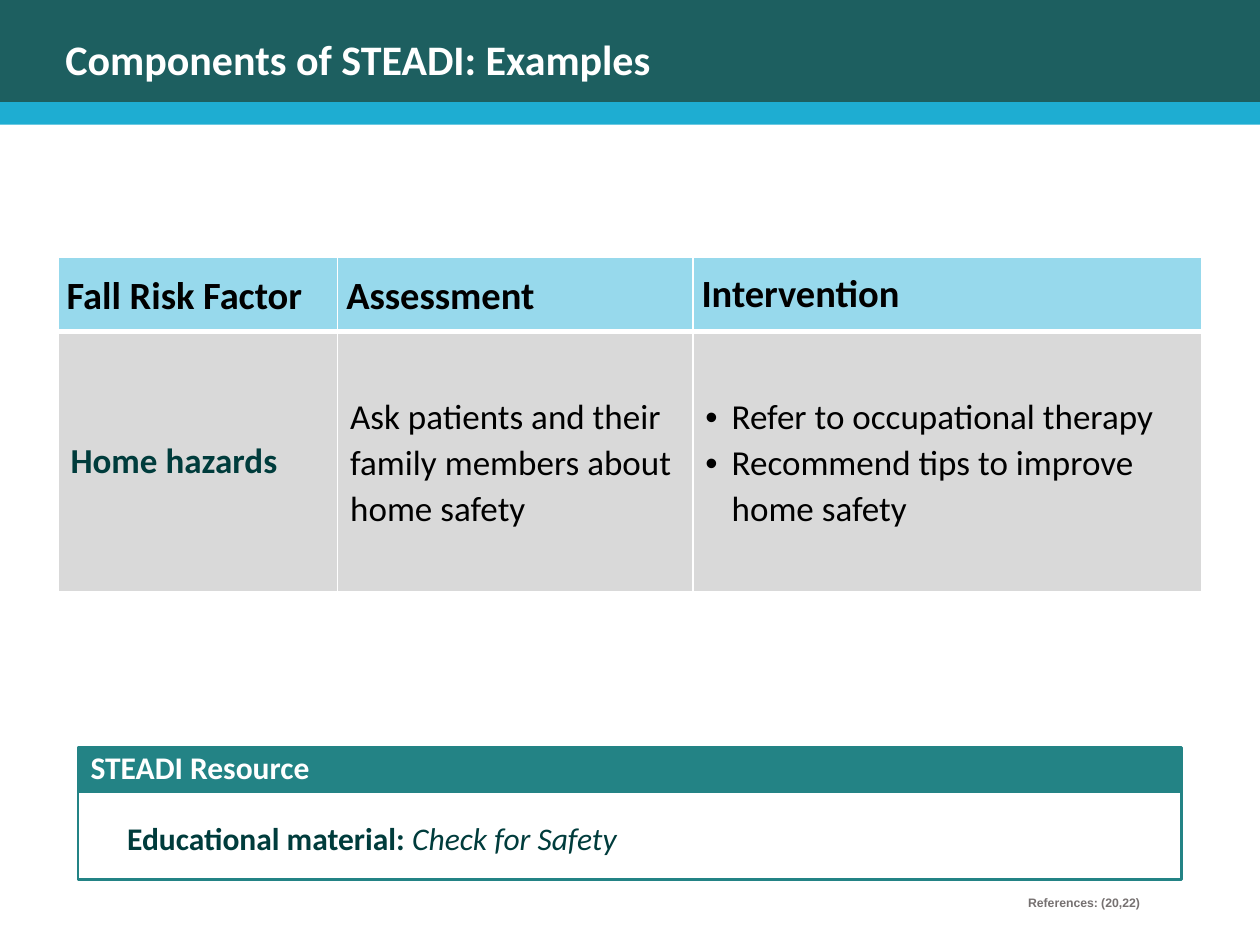
import dataclasses
import typing

import lxml.etree
import pptx
import pptx.dml.color
import pptx.enum.shapes
import pptx.enum.text
import pptx.oxml.ns
import pptx.util

Pt = pptx.util.Pt
qn = pptx.oxml.ns.qn
TOP = pptx.enum.text.MSO_ANCHOR.TOP
MIDDLE = pptx.enum.text.MSO_ANCHOR.MIDDLE
Box = tuple[float, float, float, float]

WHITE, BLACK, TEAL, INK = "FFFFFF", "000000", "238385", "003C3C"
COLUMNS = (159.8, 203, 290.9)
ROWS = (42.5, 149)


@dataclasses.dataclass
class Bar:
    box: Box
    fill: str | None
    line: str | None = None


@dataclasses.dataclass
class Run:
    text: str
    size: float
    color: str
    bold: bool = True
    italic: bool = False
    font: str = "Calibri"


@dataclasses.dataclass
class Block:
    idx: int
    box: Box
    runs: list[Run]
    anchor: typing.Any = MIDDLE
    spacing: float = 1
    before: float = 0


@dataclasses.dataclass
class Cell:
    paragraphs: list[Run]
    fill: str
    left: float
    top_line: float
    bottom_line: float
    spacing: float = 1.07
    bullets: bool = False


BARS = [
    Bar((0, 10.8, 720, 60.5), "1EADD2"),
    Bar((0, -2.2, 720, 60.5), "1D5F60"),
    Bar((44.6, 427, 630.7, 25.2), TEAL, TEAL),
    Bar((44.6, 449.3, 630.7, 53.3), None, TEAL),
]
BLOCKS = [
    Block(0, (30.2, 14.4, 620.6, 42.5),
          [Run("Components of STEADI: Examples", 24, WHITE)], spacing=0.9),
    Block(1, (44.6, 426.2, 473, 28.8),
          [Run("STEADI Resource", 18, WHITE)], TOP, 0.9, 7.5),
    Block(2, (65.5, 455, 609.8, 47.5),
          [Run("Educational material: ", 18, INK),
           Run("Check for Safety", 18, INK, False, True)]),
    Block(3, (580.3, 509, 131.8, 27.4),
          [Run("References: (20,22)", 7, "767171", font="Arial")], TOP, 0.9, 7.5),
]


def header(text: str, spacing: float = 1.07) -> Cell:
    return Cell([Run(text, 22, BLACK)], "97D9EC", 5, 1, 3, spacing)


def entry(*runs: Run, spacing: float = 1.07, bullets: bool = False) -> Cell:
    return Cell(list(runs), "D9D9D9", 7.2, 3, 1, spacing, bullets)


CELLS = [
    [header("Fall Risk Factor"), header("Assessment"), header("Intervention", 1)],
    [entry(Run("Home hazards", 20, INK), spacing=1),
     entry(Run("Ask patients and their family members about home safety",
               20, BLACK, False)),
     entry(Run("Refer to occupational therapy", 20, BLACK, False),
           Run("Recommend tips to improve home safety", 20, BLACK, False),
           bullets=True)],
]


def rgb(value: str) -> pptx.dml.color.RGBColor:
    return pptx.dml.color.RGBColor.from_string(value)


def add_run(p: typing.Any, run: Run) -> None:
    r = p.add_run()
    r.text = run.text
    f = r.font
    f.size, f.name = Pt(run.size), run.font
    f.bold, f.italic = run.bold, run.italic
    f.color.rgb = rgb(run.color)


def set_bullet(p: typing.Any, char: str | None) -> None:
    pPr = p._p.get_or_add_pPr()
    indent = Pt(15) if char else 0
    pPr.set("marL", str(indent))
    pPr.set("indent", str(-indent))
    if char:
        lxml.etree.SubElement(pPr, qn("a:buFont")).set("typeface", "Arial")
        lxml.etree.SubElement(pPr, qn("a:buChar")).set("char", char)
    else:
        lxml.etree.SubElement(pPr, qn("a:buNone"))


def draw_bar(s: typing.Any, bar: Bar) -> None:
    rect = pptx.enum.shapes.MSO_SHAPE.RECTANGLE
    sp = s.shapes.add_shape(rect, *map(Pt, bar.box))
    sp.shadow.inherit = False
    if bar.fill:
        sp.fill.solid()
        sp.fill.fore_color.rgb = rgb(bar.fill)
    else:
        sp.fill.background()
    if bar.line:
        sp.line.color.rgb = rgb(bar.line)
        sp.line.width = Pt(1.5)
    else:
        sp.line.fill.background()


def fill_block(s: typing.Any, block: Block) -> None:
    sp = s.placeholders[block.idx]
    sp.left, sp.top, sp.width, sp.height = map(Pt, block.box)
    s.shapes._spTree.append(sp._element)
    tf = sp.text_frame
    tf.word_wrap = True
    tf.auto_size = pptx.enum.text.MSO_AUTO_SIZE.NONE
    tf.vertical_anchor = block.anchor
    p = tf.paragraphs[0]
    p.alignment = pptx.enum.text.PP_ALIGN.LEFT
    p.line_spacing = block.spacing
    p.space_before = Pt(block.before)
    set_bullet(p, None)
    for run in block.runs:
        add_run(p, run)


def set_border(cell: typing.Any, side: str, width: float) -> None:
    tcPr = cell._tc.get_or_add_tcPr()
    ln = lxml.etree.SubElement(tcPr, qn(f"a:ln{side}"), w=str(Pt(width)))
    fill = lxml.etree.SubElement(ln, qn("a:solidFill"))
    lxml.etree.SubElement(fill, qn("a:srgbClr")).set("val", WHITE)


def fill_cell(cell: typing.Any, data: Cell) -> None:
    cell.vertical_anchor = MIDDLE
    cell.margin_left, cell.margin_right = Pt(data.left), Pt(5)
    cell.margin_top = cell.margin_bottom = 0
    widths = {"L": 1, "R": 1, "T": data.top_line, "B": data.bottom_line}
    for side, width in widths.items():
        set_border(cell, side, width)
    cell.fill.solid()
    cell.fill.fore_color.rgb = rgb(data.fill)
    tf = cell.text_frame
    for i, run in enumerate(data.paragraphs):
        p = tf.add_paragraph() if i else tf.paragraphs[0]
        p.line_spacing = data.spacing
        if data.bullets:
            set_bullet(p, "•")
        add_run(p, run)


def draw_table(s: typing.Any) -> None:
    table = s.shapes.add_table(len(ROWS), len(COLUMNS), Pt(33.1), Pt(146.9),
                               Pt(sum(COLUMNS)), Pt(sum(ROWS))).table
    for column, width in zip(table.columns, COLUMNS):
        column.width = Pt(width)
    for row, height, cells in zip(table.rows, ROWS, CELLS):
        row.height = Pt(height)
        for cell, data in zip(row.cells, cells):
            fill_cell(cell, data)


def main() -> None:
    prs = pptx.Presentation()
    prs.slide_width, prs.slide_height = Pt(720), Pt(540)
    s = prs.slides.add_slide(prs.slide_layouts[4])
    for bar in BARS:
        draw_bar(s, bar)
    draw_table(s)
    for block in BLOCKS:
        fill_block(s, block)
    spare = s.placeholders[4]._element
    spare.getparent().remove(spare)
    prs.save("out.pptx")


if __name__ == "__main__":
    main()
